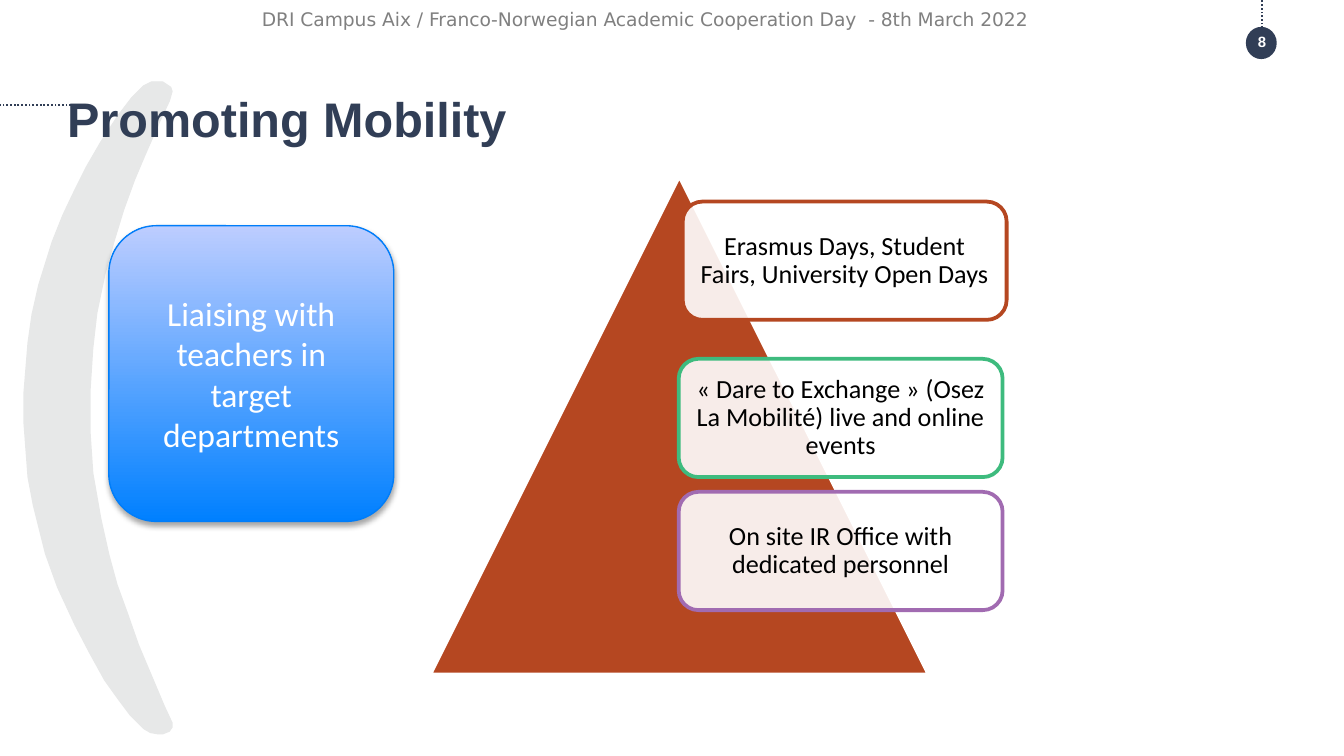
from lxml import etree
from pptx import Presentation
from pptx.dml.color import RGBColor
from pptx.enum import dml, shapes, text
from pptx.oxml import ns
from pptx.util import Inches, Pt

HEX = {"navy": "313E56", "mist": "E7E8E8", "rust": "B54721", "green": "3EBB7E",
       "plum": "A16BB1", "white": "FFFFFF", "black": "000000", "grey": "808080",
       "blue": "0080FF", "pale": "BDCDFF", "edge": "007DF9"}
RGB = {name: RGBColor.from_string(code) for name, code in HEX.items()}
KIND = shapes.MSO_SHAPE
MID = text.MSO_ANCHOR.MIDDLE
MIDDLE = text.PP_ALIGN.CENTER

# A 16:9 slide
deck = Presentation()
deck.slide_width, deck.slide_height = Inches(10), Inches(10) * 9 // 16
slide = deck.slides.add_slide(deck.slide_layouts[5])
items = slide.shapes


def write(shape, words, size, font, color, bold=False, align=MIDDLE, anchor=MID):
    frame = shape.text_frame
    frame.word_wrap = True
    frame.auto_size = text.MSO_AUTO_SIZE.NONE
    frame.vertical_anchor = anchor
    para = frame.paragraphs[0]
    para.alignment = align
    run = para.add_run()
    run.text = words
    run.font.size, run.font.name, run.font.bold = Pt(size), font, bold
    run.font.color.rgb = RGB[color]
    return para


def draw(kind, box, fill, line=None, width=2):
    shape = items.add_shape(kind, *map(Inches, box))
    shape.shadow.inherit = False
    shape.fill.solid()
    shape.fill.fore_color.rgb = RGB[fill]
    if line:
        shape.line.color.rgb = RGB[line]
        shape.line.width = Pt(width)
    else:
        shape.line.fill.background()
    return shape


# Large bracket in hundredths of an inch: outer edge downwards, inner edge back up
outer = [(128, 68), (127, 65), (121, 61), (113, 61), (107, 64), (98, 73),
         (88, 86), (75, 106), (64, 125), (56, 141), (47, 160), (39, 180),
         (29, 212), (24, 234), (21, 255), (18, 292), (18, 315), (21, 355),
         (25, 376), (34, 412), (43, 437), (56, 465), (67, 486), (78, 506),
         (88, 520), (97, 532), (107, 542), (112, 545), (118, 546), (121, 546),
         (126, 544), (128, 541)]
inner = [(128, 538), (122, 525), (114, 506), (103, 480), (95, 457), (87, 435),
         (81, 413), (75, 386), (69, 352), (67, 322), (67, 290), (69, 259),
         (72, 233), (78, 204), (85, 179), (92, 156), (100, 134), (108, 115),
         (119, 90), (126, 75)]
pen = items.build_freeform(*outer[0], scale=Inches(0.01))
pen.add_line_segments(outer[1:] + inner, close=True)
arc = pen.convert_to_shape()
arc.shadow.inherit = False
arc.fill.solid()
arc.fill.fore_color.rgb = arc.line.color.rgb = RGB["mist"]
arc.line.width = Pt(0.75)

# Page badge and dotted rules
draw(KIND.OVAL, (9.27, 0.2, 0.23, 0.24), "navy")
for ends in [(9.39, 0.21, 9.39, 0), (0.64, 0.78, 0, 0.78)]:
    rule = items.add_connector(shapes.MSO_CONNECTOR.STRAIGHT, *map(Inches, ends))
    rule.line.color.rgb = RGB["navy"]
    rule.line.width = Pt(1)
    rule.line.dash_style = dml.MSO_LINE.ROUND_DOT
    etree.SubElement(rule.element.spPr, ns.qn("a:effectLst"))

# Pyramid with its three cards
draw(KIND.ISOSCELES_TRIANGLE, (3.2, 1.31, 3.71, 3.71), "rust", "white")
cards = [
    (5.08, 1.5, "rust", "Erasmus Days, Student Fairs, University Open Days"),
    (5.05, 2.67, "green",
     "« Dare to Exchange » (Osez La Mobilité) live and online events"),
    (5.05, 3.66, "plum", "On site IR Office with dedicated personnel"),
]
for left, top, color, words in cards:
    card = draw(KIND.ROUNDED_RECTANGLE, (left, top, 2.41, 0.88), "white", color)
    tint = card.element.spPr.find(".//" + ns.qn("a:srgbClr"))
    etree.SubElement(tint, ns.qn("a:alpha"), val="90000")
    frame = card.text_frame
    frame.margin_left = frame.margin_right = Inches(0.06)
    frame.margin_top = frame.margin_bottom = Inches(0.06)
    write(card, words, 14, "Calibri", "black").line_spacing = 0.9

# Title, kept above the bracket
title = items.title
title.left, title.top = Inches(0.5), Inches(0.66)
title.width, title.height = Inches(9), Inches(0.53)
frame = title.text_frame
frame.margin_left = frame.margin_right = frame.margin_top = frame.margin_bottom = 0
write(title, "Promoting Mobility", 26, "Arial", "navy", True,
      text.PP_ALIGN.LEFT, text.MSO_ANCHOR.TOP)
title.element.getparent().append(title.element)

# Header and page number
head = items.add_textbox(Inches(1.85), Inches(0), Inches(7.29), Inches(0.29))
write(head, "DRI Campus Aix / Franco-Norwegian Academic Cooperation Day  - 8th March 2022",
      10, "DejaVu Sans", "grey", align=text.PP_ALIGN.LEFT)
page = items.add_textbox(Inches(9.14), Inches(0.25), Inches(0.5), Inches(0.12))
write(page, "8", 8, "Arial", "white", True)

# Gradient panel with a soft shadow
panel = draw(KIND.ROUNDED_RECTANGLE, (0.81, 1.68, 2.12, 2.2), "blue", "edge", 0.75)
panel.fill.gradient()
panel.fill.gradient_angle = 90
for stop, color in zip(panel.fill.gradient_stops, ("blue", "pale")):
    stop.color.rgb = RGB[color]
glow = etree.SubElement(panel.element.spPr.find(ns.qn("a:effectLst")),
                        ns.qn("a:outerShdw"), blurRad=str(Pt(3.1)),
                        dist=str(Pt(1.8)), dir="5400000", rotWithShape="0")
shade = etree.SubElement(glow, ns.qn("a:srgbClr"), val=HEX["black"])
etree.SubElement(shade, ns.qn("a:alpha"), val="35000")
write(panel, "Liaising with teachers in target departments", 18, "Calibri", "white")

deck.save("out.pptx")
